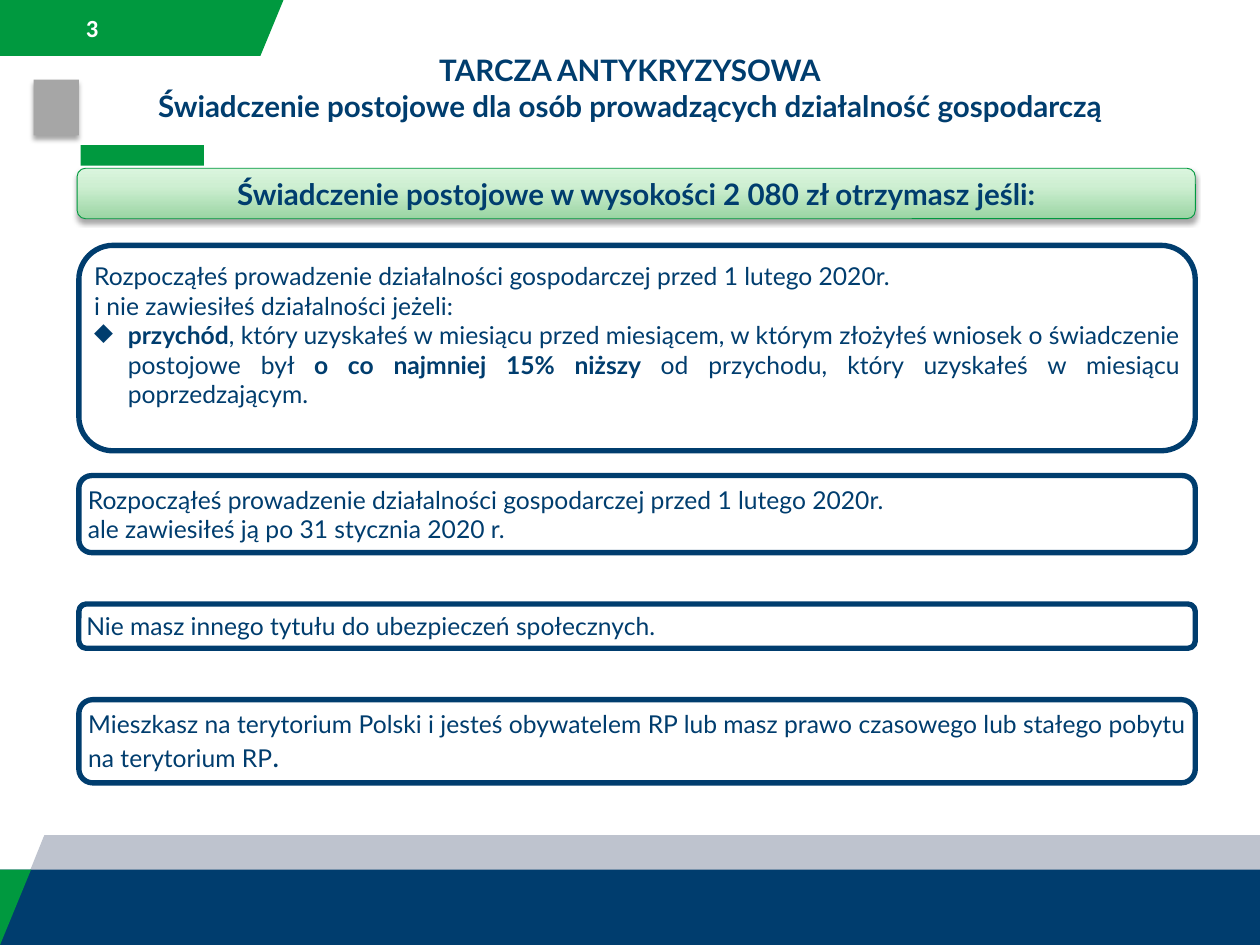
from copy import deepcopy

from lxml import etree
from pptx import Presentation
from pptx.dml.color import RGBColor
from pptx.enum.shapes import MSO_SHAPE
from pptx.enum.text import MSO_ANCHOR, MSO_AUTO_SIZE, PP_ALIGN
from pptx.oxml.ns import qn
from pptx.util import Inches, Pt

RECT, ROUNDED = MSO_SHAPE.RECTANGLE, MSO_SHAPE.ROUNDED_RECTANGLE
TOP, MIDDLE = MSO_ANCHOR.TOP, MSO_ANCHOR.MIDDLE
LEFT, CENTER, JUSTIFY = PP_ALIGN.LEFT, PP_ALIGN.CENTER, PP_ALIGN.JUSTIFY

NAVY, GREEN, GREY, SILVER, WHITE = "003D6E", "00993F", "A6A6A6", "BEC3CE", "FFFFFF"
WIDTH, HEIGHT = 14.22, 10.67
BAND_TOP = 9.82
BOX_LEFT, BOX_WIDTH = 0.89, 12.6
INSET = 0.06

TITLE = ["TARCZA ANTYKRYZYSOWA",
         "Świadczenie postojowe dla osób prowadzących działalność gospodarczą"]
BANNER = "Świadczenie postojowe w wysokości 2\u00a0080 zł otrzymasz jeśli:"
BANNER_STOPS = [(0, "9AD5A3"), (0.65, "CEEFD2"), (1, "DBF5DE")]
STARTED = "Rozpocząłeś prowadzenie działalności gospodarczej przed 1 lutego 2020r."

# A paragraph is a list of runs: (text, bold, size)
INCOME = [
    ("przychód", True, 20),
    (", który uzyskałeś w miesiącu przed miesiącem, w którym złożyłeś wniosek "
     "o świadczenie postojowe był ", False, 20),
    ("o co najmniej 15% niższy ", True, 20),
    ("od przychodu, który uzyskałeś w miesiącu poprzedzającym.", False, 20),
]
RESIDENCE = [
    ("Mieszkasz na terytorium Polski i jesteś obywatelem RP lub masz prawo "
     "czasowego lub stałego pobytu na terytorium RP", False, 20),
    (".", False, 24),
]

# Condition boxes: top, height, bottom inset, paragraphs
CONDITIONS = [
    (2.77, 2.32, 0.36, [[(STARTED, False, 20)],
                        [("i nie zawiesiłeś działalności jeżeli:", False, 20)],
                        INCOME]),
    (5.37, 0.87, INSET, [[(STARTED, False, 20)],
                         [("ale zawiesiłeś ją po 31 stycznia 2020 r.", False, 20)]]),
    (6.82, 0.5, INSET, [[("Nie masz innego tytułu do ubezpieczeń społecznych.",
                          False, 20)]]),
    (7.9, 0.94, INSET, [RESIDENCE]),
]

CORNERS = [
    (GREEN, [(0, 0), (3.2, 0), (2.94, 0.63), (0, 0.63)]),
    (SILVER, [(0, HEIGHT), (0.5, 9.43), (WIDTH, 9.43), (WIDTH, HEIGHT)]),
]
WEDGE = (GREEN, [(0, BAND_TOP), (0.35, BAND_TOP), (0, HEIGHT)])


def rgb(color):
    return RGBColor.from_string(color)


def add_box(s, kind, box, fill, line=None, line_width=0):
    sp = s.shapes.add_shape(kind, *map(Inches, box))
    sp.shadow.inherit = False
    sp.fill.solid()
    sp.fill.fore_color.rgb = rgb(fill)
    if line:
        sp.line.color.rgb = rgb(line)
        sp.line.width = Pt(line_width)
    else:
        sp.line.fill.background()
    return sp


def add_outline(s, fill, points):
    (x, y), *rest = [(Inches(px), Inches(py)) for px, py in points]
    builder = s.shapes.build_freeform(x, y)
    builder.add_line_segments(rest, close=True)
    sp = builder.convert_to_shape()
    sp.shadow.inherit = False
    sp.fill.solid()
    sp.fill.fore_color.rgb = rgb(fill)
    sp.line.fill.background()


def add_shadow(sp):
    effects = sp._element.spPr.find(qn("a:effectLst"))
    shadow = etree.SubElement(effects, qn("a:outerShdw"), blurRad=str(Pt(4)),
                              dist=str(Pt(3)), dir="5400000", rotWithShape="0")
    color = etree.SubElement(shadow, qn("a:srgbClr"), val="000000")
    etree.SubElement(color, qn("a:alpha"), val="35000")


def add_gradient(sp, stops):
    sp.fill.gradient()
    sp.fill.gradient_angle = 90
    stop_list = sp._element.spPr.find(qn("a:gradFill")).find(qn("a:gsLst"))
    while len(stop_list) < len(stops):
        stop_list.append(deepcopy(stop_list[0]))
    for stop, (position, color) in zip(sp.fill.gradient_stops, stops):
        stop.position = position
        stop.color.rgb = rgb(color)


def add_bullet(p, char, indent):
    pPr = p._p.get_or_add_pPr()
    pPr.set("marL", str(Inches(indent)))
    pPr.set("indent", str(-Inches(indent)))
    etree.SubElement(pPr, qn("a:buChar"), char=char)


def set_frame(tf, anchor, bottom=INSET):
    tf.word_wrap = True
    tf.auto_size = MSO_AUTO_SIZE.NONE
    tf.vertical_anchor = anchor
    tf.margin_left = tf.margin_right = tf.margin_top = Inches(INSET)
    tf.margin_bottom = Inches(bottom)


def write(tf, paragraphs, align, color=NAVY, font="Lato"):
    for i, runs in enumerate(paragraphs):
        p = tf.paragraphs[0] if i == 0 else tf.add_paragraph()
        p.alignment = align
        if runs is INCOME:
            add_bullet(p, "◆", 0.38)
        for text, bold, size in runs:
            r = p.add_run()
            r.text = text
            r.font.name = font
            r.font.size = Pt(size)
            r.font.bold = bold
            r.font.color.rgb = rgb(color)


prs = Presentation()
prs.slide_width, prs.slide_height = Inches(WIDTH), Inches(HEIGHT)
s = prs.slides.add_slide(prs.slide_layouts[5])

for fill, points in CORNERS:
    add_outline(s, fill, points)
add_box(s, RECT, (0, BAND_TOP, WIDTH, HEIGHT - BAND_TOP), NAVY)
add_outline(s, *WEDGE)
add_box(s, RECT, (0.91, 1.64, 1.39, 0.23), GREEN)
add_shadow(add_box(s, RECT, (0.38, 0.9, 0.51, 0.63), GREY))

number = s.shapes.add_textbox(*map(Inches, (0.91, 0.09, 0.85, 0.45)))
set_frame(number.text_frame, MIDDLE)
write(number.text_frame, [[("3", True, 20)]], LEFT, WHITE, "Calibri")

title = s.shapes.title
title.left, title.top, title.width, title.height = map(Inches, (0.81, 0.53, 12.6, 1.34))
set_frame(title.text_frame, TOP)
write(title.text_frame, [[(line, True, 24)] for line in TITLE], CENTER)

banner = add_box(s, ROUNDED, (0.87, 1.9, 12.62, 0.57), WHITE, GREEN, 0.75)
add_gradient(banner, BANNER_STOPS)
add_shadow(banner)
set_frame(banner.text_frame, MIDDLE)
write(banner.text_frame, [[(BANNER, True, 24)]], CENTER)

for top, height, bottom, paragraphs in CONDITIONS:
    sp = add_box(s, ROUNDED, (BOX_LEFT, top, BOX_WIDTH, height), WHITE, NAVY, 4.33)
    set_frame(sp.text_frame, MIDDLE, bottom)
    write(sp.text_frame, paragraphs, JUSTIFY)

prs.save("out.pptx")
